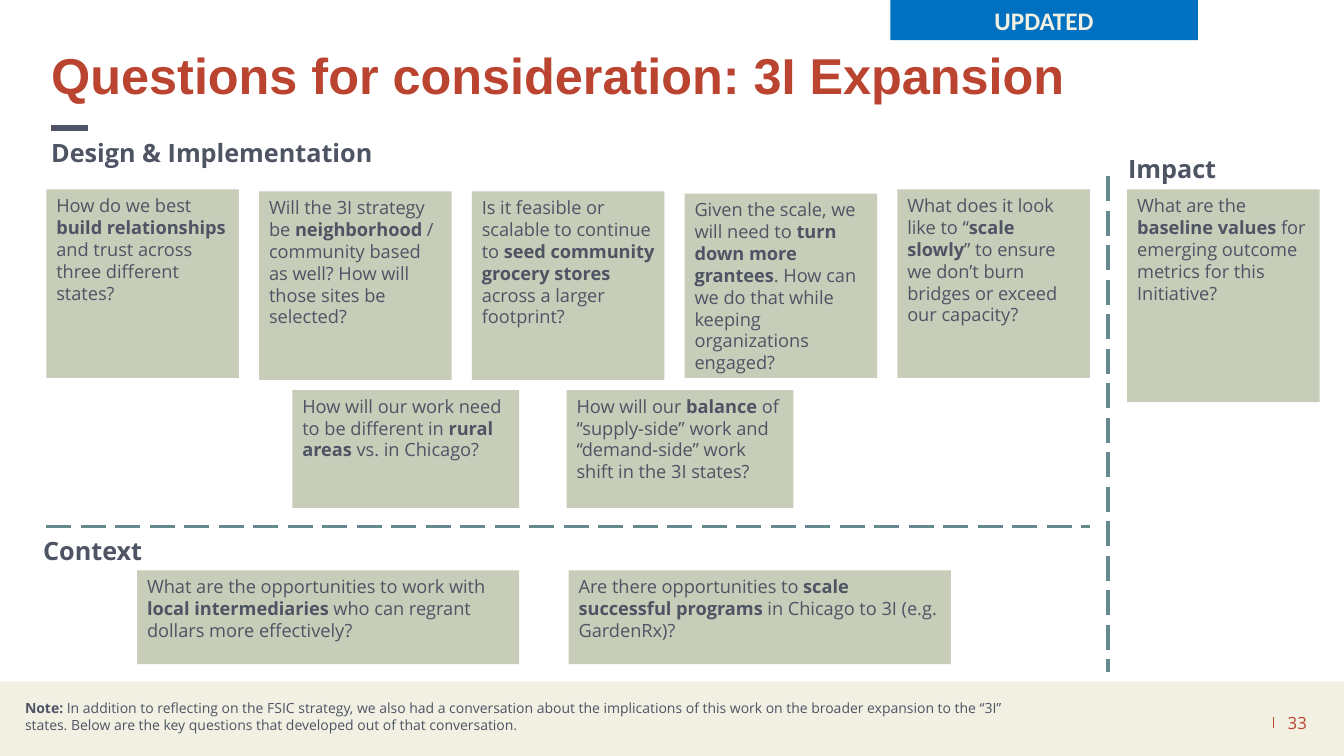
from pptx import Presentation
from pptx.dml.color import RGBColor
from pptx.enum.dml import MSO_LINE
from pptx.enum.shapes import MSO_CONNECTOR, MSO_SHAPE
from pptx.enum.text import MSO_ANCHOR, PP_ALIGN
from pptx.oxml.ns import qn
from pptx.util import Inches, Pt

RECT = MSO_SHAPE.RECTANGLE
LINE = MSO_CONNECTOR.STRAIGHT
DASH = MSO_LINE.LONG_DASH
TOP, MID = MSO_ANCHOR.TOP, MSO_ANCHOR.MIDDLE
LEFT, MIDDLE, RIGHT = PP_ALIGN.LEFT, PP_ALIGN.CENTER, PP_ALIGN.RIGHT
SLATE, RUST, SAGE, CREAM = "4E5464", "BA4430", "C7CDB8", "F1F0E2"
TEAL, BLUE = "65898C", "0070C0"


def color(code):
    return RGBColor.from_string(code)


class Deck:
    """Hold the style and the current slide, and draw each kind of element."""

    def __init__(self):
        self.deck = Presentation()
        self.deck.slide_width = Inches(13.33)
        self.deck.slide_height = Inches(7.5)
        self.slide = self.deck.slides.add_slide(self.deck.slide_layouts[6])
        self.font = "Open Sans"

    def label(self, shape, text, size, ink=SLATE, font=None, align=LEFT, anchor=TOP):
        frame = shape.text_frame
        frame.word_wrap = True
        frame.vertical_anchor = anchor
        para = frame.paragraphs[0]
        para.alignment = align
        for i, part in enumerate(text.split("*")):
            if part:
                run = para.add_run()
                run.text = part
                run.font.size = Pt(size)
                run.font.name = font or self.font
                run.font.bold = i % 2 == 1
                run.font.color.rgb = color(ink)
        return para

    def block(self, x, y, w, h, fill):
        shape = self.slide.shapes.add_shape(
            RECT, Inches(x), Inches(y), Inches(w), Inches(h))
        shape.shadow.inherit = False
        shape.fill.solid()
        shape.fill.fore_color.rgb = color(fill)
        shape.line.fill.background()
        return shape

    def card(self, x, y, w, h, text):
        self.label(self.block(x, y, w, h, SAGE), text, 13)

    def text(self, x, y, w, h, text, size, **style):
        box = self.slide.shapes.add_textbox(
            Inches(x), Inches(y), Inches(w), Inches(h))
        return self.label(box, text, size, **style)

    def rule(self, x1, y1, x2, y2, ink, width, dash=None):
        line = self.slide.shapes.add_connector(
            LINE, Inches(x1), Inches(y1), Inches(x2), Inches(y2))
        line.line.color.rgb = color(ink)
        line.line.width = Pt(width)
        if dash:
            line.line.dash_style = dash
        props = line._element.spPr
        props.append(props.makeelement(qn("a:effectLst"), {}))


def main():
    deck = Deck()
    deck.block(0, 6.76, 13.33, 0.74, CREAM)
    deck.rule(12.63, 7.11, 12.63, 7.22, RUST, 1)
    deck.text(12.37, 6.97, 0.69, 0.4, "33", 12, ink=RUST, align=RIGHT, anchor=MID)
    deck.rule(0.51, 1.27, 0.87, 1.27, SLATE, 3.75)
    title = deck.text(0.41, 0.45, 12.42, 0.65,
                      "*Questions for consideration: 3I Expansion*", 36,
                      ink=RUST, font="Arial", anchor=MID)
    title.line_spacing = 0.9

    design = [
        (1.88, 1.87, "How do we best *build relationships *and trust across "
         "three different states?"),
        (1.9, 1.87, "Will the 3I strategy be *neighborhood* / community based "
         "as well? How will those sites be selected?"),
        (1.9, 1.87, "Is it feasible or scalable to continue to *seed community "
         "grocery stores *across a larger footprint?"),
        (1.92, 1.83, "Given the scale, we will need to *turn down more "
         "grantees*. How can we do that while keeping organizations engaged?"),
        (1.88, 1.87, "What does it look like to “*scale slowly*” to ensure we "
         "don’t burn bridges or exceed our capacity?"),
    ]
    for i, (y, h, ask) in enumerate(design):
        deck.card(0.46 + 2.11 * i, y, 1.91, h, ask)

    deck.card(2.9, 3.87, 2.25, 1.17,
              "How will our work need to be different in *rural areas *vs. in Chicago?")
    deck.card(5.62, 3.87, 2.25, 1.17,
              "How will our *balance* of “supply-side” work and “demand-side” "
              "work shift in the 3I states?")
    deck.card(1.36, 5.66, 3.79, 0.93,
              "What are the opportunities to work with *local intermediaries *"
              "who can regrant dollars more effectively?")
    deck.card(5.64, 5.66, 3.79, 0.93,
              "Are there opportunities to *scale successful programs *in "
              "Chicago to 3I (e.g. GardenRx)?")
    deck.card(11.18, 1.88, 1.91, 2.11,
              "What are the *baseline values *for emerging outcome metrics "
              "for this Initiative?")

    heads = [(0.41, 1.31, 4.37, "Design & Implementation"),
             (0.33, 5.26, 2.57, "Context"),
             (11.09, 1.47, 2, "Impact")]
    for x, y, w, name in heads:
        deck.text(x, y, w, 0.4, f"*{name}*", 18)

    deck.rule(0.46, 5.22, 10.81, 5.22, TEAL, 2.25, DASH)
    deck.rule(10.99, 1.75, 10.99, 6.67, TEAL, 2.25, DASH)
    deck.text(0.15, 6.89, 10, 0.44,
              "*Note: *In addition to reflecting on the FSIC strategy, we also "
              "had a conversation about the implications of this work on the "
              "broader expansion to the “3I” states. Below are the key "
              "questions that developed out of that conversation.", 10)
    deck.label(deck.block(8.83, 0, 3.05, 0.4, BLUE), "*UPDATED*", 18,
               ink=CREAM, font="Calibri", align=MIDDLE)
    deck.deck.save("out.pptx")


if __name__ == "__main__":
    main()
